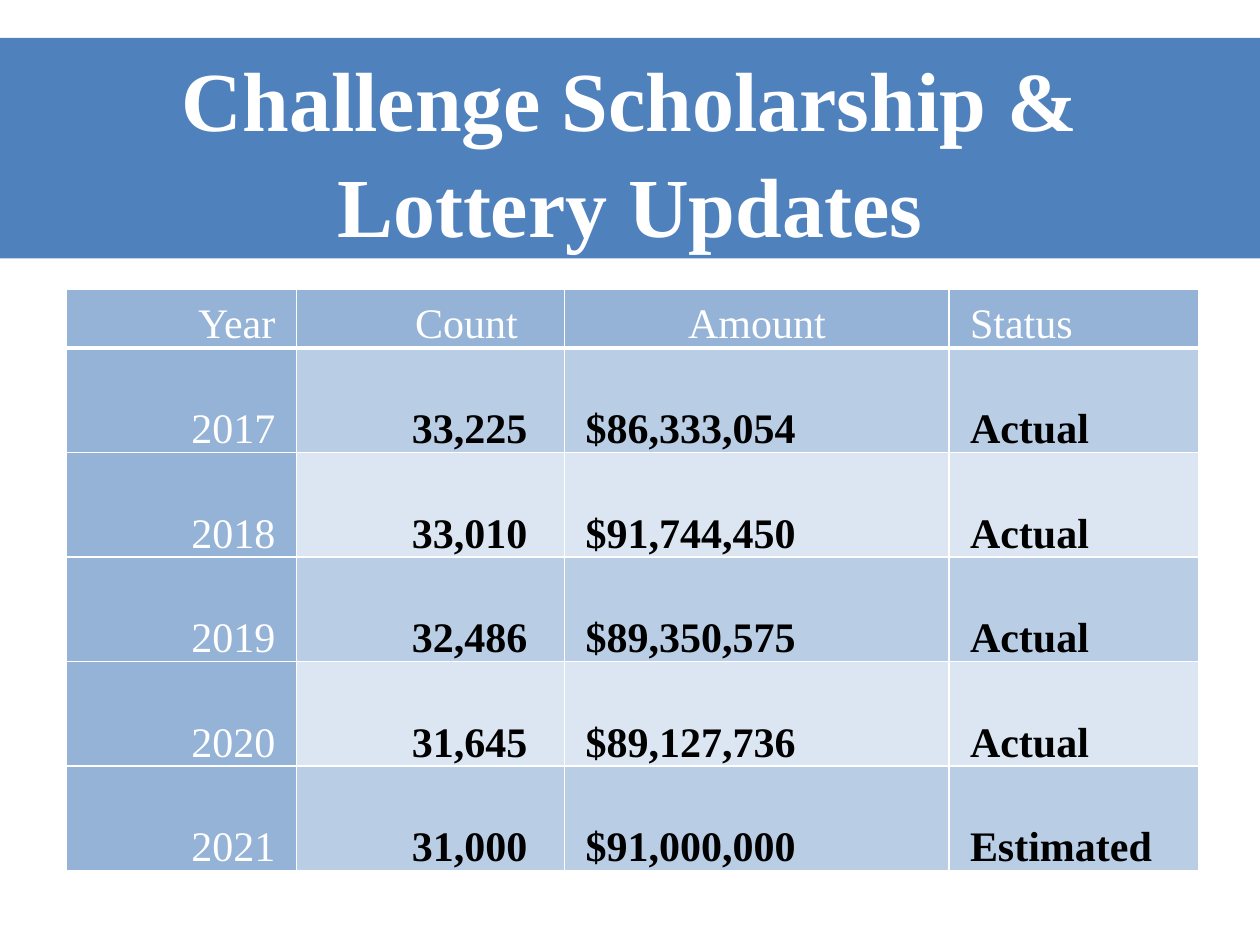
from dataclasses import dataclass
from lxml import etree
from pptx import Presentation
from pptx.dml.color import RGBColor
from pptx.enum.text import MSO_ANCHOR, PP_ALIGN
from pptx.oxml.ns import qn
from pptx.table import _Cell
from pptx.util import Pt

LEFT, MID, RIGHT = PP_ALIGN.LEFT, PP_ALIGN.CENTER, PP_ALIGN.RIGHT
LOW, CORE = MSO_ANCHOR.BOTTOM, MSO_ANCHOR.MIDDLE
FACE = "Times New Roman"
WHITE, BLACK, BLUE = "FFFFFF", "000000", "4F81BD"
HEAD, DARK, PALE = "95B3D7", "B9CDE5", "DCE6F2"
PAD = 12


@dataclass
class Column:
    name: str
    width: float
    head: PP_ALIGN
    body: PP_ALIGN
    shift: float = 0
    indent: float = 0


COLS = [
    Column("Year", 131.76, RIGHT, RIGHT),
    Column("Count", 153.36, MID, LEFT, 41, 54),
    Column("Amount", 219.6, MID, LEFT),
    Column("Status", 142.56, LEFT, LEFT),
]
ROWS = [
    ("2017", "33,225", "$86,333,054", "Actual"),
    ("2018", "33,010", "$91,744,450", "Actual"),
    ("2019", "32,486", "$89,350,575", "Actual"),
    ("2020", "31,645", "$89,127,736", "Actual"),
    ("2021", "31,000", "$91,000,000", "Estimated"),
]
TOP, STEP = 33.84, 59.76


def tint(code: str) -> RGBColor:
    return RGBColor.from_string(code)


def apply(thing, **form) -> None:
    for key, value in form.items():
        setattr(thing, key, value)


def paint(shape, code: str) -> None:
    shape.fill.solid()
    shape.fill.fore_color.rgb = tint(code)


def write(frame, text: str, size: float, code: str, bold: bool, align: PP_ALIGN) -> None:
    frame.text = text
    para = frame.paragraphs[0]
    para.alignment = align
    for run in para.runs:
        apply(run.font, name=FACE, size=Pt(size), bold=bold)
        run.font.color.rgb = tint(code)


def edge(cell: _Cell, base: float) -> None:
    props = cell._tc.get_or_add_tcPr()
    for side, width in zip("LRTB", (1, 1, 1, base)):
        line = etree.SubElement(props, qn(f"a:ln{side}"), w=str(Pt(width)))
        fill = etree.SubElement(line, qn("a:solidFill"))
        etree.SubElement(fill, qn("a:srgbClr"), val=WHITE)


def draw_cell(cell: _Cell, text: str, row: int, pos: int) -> None:
    col = COLS[pos]
    top = row == 0
    label = top or pos == 0
    edge(cell, 3 if top else 1)
    paint(cell, HEAD if label else DARK if row % 2 else PALE)
    extra = col.shift if top else col.indent
    apply(cell, margin_left=Pt(PAD + extra), margin_right=Pt(PAD),
          margin_top=0, margin_bottom=0, vertical_anchor=LOW)
    write(cell.text_frame, text, 24, WHITE if label else BLACK,
          not label, col.head if top else col.body)


def draw_table(slide) -> None:
    data = [tuple(col.name for col in COLS), *ROWS]
    width = sum(col.width for col in COLS)
    height = TOP + STEP * len(ROWS)
    table = slide.shapes.add_table(len(data), len(COLS), Pt(37.6), Pt(165),
                                   Pt(width), Pt(height)).table
    apply(table, first_row=False, horz_banding=False)
    for pos, col in enumerate(COLS):
        table.columns[pos].width = Pt(col.width)
    for row, texts in enumerate(data):
        table.rows[row].height = Pt(STEP if row else TOP)
        for pos, text in enumerate(texts):
            draw_cell(table.cell(row, pos), text, row, pos)


def draw_title(slide) -> None:
    title = slide.shapes.title
    apply(title, left=0, top=Pt(21.6), width=Pt(720), height=Pt(126))
    paint(title, BLUE)
    frame = title.text_frame
    apply(frame, vertical_anchor=CORE, word_wrap=True)
    write(frame, "Challenge Scholarship &\vLottery Updates", 48, WHITE, True, MID)
    frame.paragraphs[0].line_spacing = 1.05


def main() -> None:
    deck = Presentation()
    apply(deck, slide_width=Pt(720), slide_height=Pt(540))
    slide = deck.slides.add_slide(deck.slide_layouts[5])
    draw_title(slide)
    draw_table(slide)
    deck.save("out.pptx")


if __name__ == "__main__":
    main()
